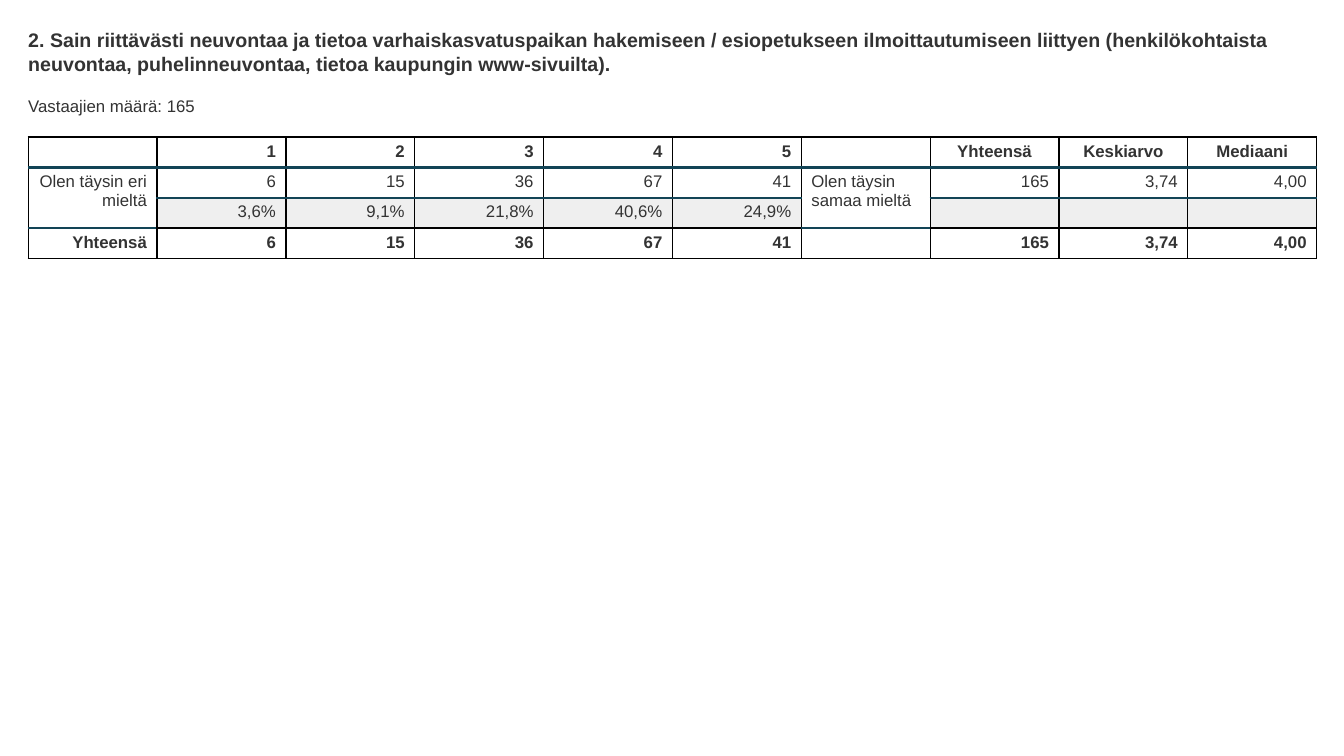
from lxml import etree
from pptx import Presentation
from pptx.dml.color import RGBColor
from pptx.enum.text import MSO_AUTO_SIZE, PP_ALIGN
from pptx.oxml.ns import qn
from pptx.util import Inches, Pt

LEFT, CENTER, RIGHT = PP_ALIGN.LEFT, PP_ALIGN.CENTER, PP_ALIGN.RIGHT
FIT_SHAPE = MSO_AUTO_SIZE.SHAPE_TO_FIT_TEXT
BLACK, NAVY, WHITE, GRAY, TEXT = "000000", "124456", "FFFFFF", "EFEFEF", "333333"


def write(text_frame, text, size=12, bold=False, align=LEFT):
    paragraph = text_frame.paragraphs[0]
    paragraph.alignment = align
    if not text:
        etree.SubElement(paragraph._p, qn("a:endParaRPr"), sz=str(size * 100))
        return
    run = paragraph.add_run()
    run.text = text
    run.font.name = "Arial"
    run.font.size = Pt(size)
    run.font.bold = bold
    run.font.color.rgb = RGBColor.from_string(TEXT)


def add_border(cell, side, color, width):
    properties = cell._tc.get_or_add_tcPr()
    line = etree.SubElement(properties, qn("a:ln" + side), w=str(Pt(width)))
    fill = etree.SubElement(line, qn("a:solidFill"))
    etree.SubElement(fill, qn("a:srgbClr"), val=color)


presentation = Presentation()
presentation.slide_width = Inches(13.33)
presentation.slide_height = Inches(7.5)
slide = presentation.slides.add_slide(presentation.slide_layouts[6])

question = (
    "2. Sain riittävästi neuvontaa ja tietoa varhaiskasvatuspaikan hakemiseen / "
    "esiopetukseen ilmoittautumiseen liittyen (henkilökohtaista neuvontaa, "
    "puhelinneuvontaa, tietoa kaupungin www-sivuilta)."
)
headings = [
    (question, 0.28, 0.47, 14, True),
    ("Vastaajien määrä: 165", 0.95, 0.2, 12, False),
]
for text, top, height, size, bold in headings:
    box = slide.shapes.add_textbox(Inches(0.28), Inches(top), Inches(12.78), Inches(height))
    frame = box.text_frame
    frame.word_wrap = True
    frame.auto_size = FIT_SHAPE
    frame.margin_left = frame.margin_right = frame.margin_top = frame.margin_bottom = 0
    write(frame, text, size=size, bold=bold)

rows = [
    ["", "1", "2", "3", "4", "5", "", "Yhteensä", "Keskiarvo", "Mediaani"],
    ["Olen täysin eri mieltä", "6", "15", "36", "67", "41",
     "Olen täysin samaa mieltä", "165", "3,74", "4,00"],
    ["", "3,6%", "9,1%", "21,8%", "40,6%", "24,9%", "", "", "", ""],
    ["Yhteensä", "6", "15", "36", "67", "41", "", "165", "3,74", "4,00"],
]
label_columns = (0, 6)
row_edges = [(BLACK, 1), (NAVY, 2), (NAVY, 1.5), (BLACK, 1.5), (BLACK, 1)]
label_edges = [(BLACK, 1), (NAVY, 2), (NAVY, 1.5), (NAVY, 1.5), (BLACK, 1)]

table = slide.shapes.add_table(
    len(rows), len(rows[0]), Inches(0.28), Inches(1.36), Inches(12.78), Inches(1.2)
).table
for column in label_columns:
    table.cell(1, column).merge(table.cell(2, column))

for row, values in enumerate(rows):
    for column, text in enumerate(values):
        cell = table.cell(row, column)
        is_label = column in label_columns
        if row == 0 and column > 6:
            align = CENTER
        elif column == 6:
            align = LEFT
        else:
            align = RIGHT
        write(cell.text_frame, text, bold=row in (0, 3), align=align)

        edges = label_edges if is_label else row_edges
        top_edge = 1 if cell.is_spanned else row
        bottom_edge = 3 if cell.is_merge_origin else row + 1
        add_border(cell, "L", BLACK, 1)
        add_border(cell, "R", BLACK, 1)
        add_border(cell, "T", *edges[top_edge])
        add_border(cell, "B", *edges[bottom_edge])
        cell.fill.solid()
        shade = GRAY if row == 2 and not is_label else WHITE
        cell.fill.fore_color.rgb = RGBColor.from_string(shade)

presentation.save("out.pptx")
